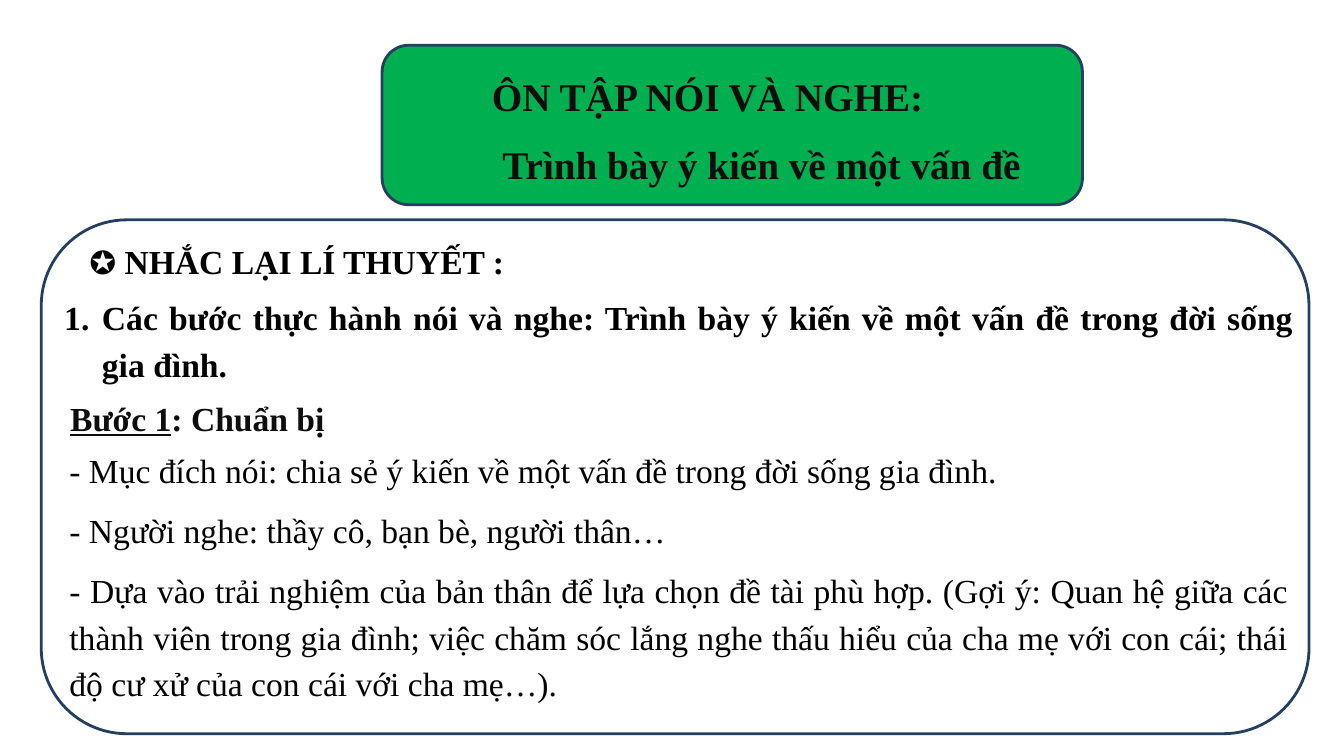
from dataclasses import dataclass

from lxml.etree import SubElement
from pptx import Presentation
from pptx.dml.color import RGBColor
from pptx.enum.shapes import MSO_SHAPE as Shape
from pptx.enum.text import MSO_ANCHOR as Anchor, MSO_AUTO_SIZE as AutoSize, PP_ALIGN as Align
from pptx.oxml.ns import qn
from pptx.util import Cm, Pt

FONT = "Times New Roman"
BLACK, INK, NAVY, GREEN = "000000", "0D0D0D", "243F60", "00B050"


@dataclass
class Box:
    left: float
    top: float
    width: float
    height: float

    def lengths(self) -> tuple:
        return Cm(self.left), Cm(self.top), Cm(self.width), Cm(self.height)


@dataclass
class Span:
    text: str
    bold: bool = False
    underline: bool = False


@dataclass
class Para:
    spans: list[Span]
    align: Align = Align.JUSTIFY
    margin: float = 0
    indent: float = 0
    numbered: bool = False
    line: float = 1.15
    after: float = 10


@dataclass
class TextBlock:
    box: Box
    paras: list[Para]
    color: str = BLACK
    size: float = 24


def rgb(value: str) -> RGBColor:
    return RGBColor.from_string(value)


def add_frame(s, box: Box, fill: str | None = None) -> None:
    sp = s.shapes.add_shape(Shape.ROUNDED_RECTANGLE, *box.lengths())
    sp.shadow.inherit = False
    sp.line.color.rgb = rgb(NAVY)
    sp.line.width = Pt(2)
    if fill:
        sp.fill.solid()
        sp.fill.fore_color.rgb = rgb(fill)
    else:
        sp.fill.background()


def write_text(sp, block: TextBlock) -> None:
    sp.left, sp.top, sp.width, sp.height = block.box.lengths()
    tf = sp.text_frame
    tf.word_wrap = True
    tf.auto_size = AutoSize.NONE
    tf.vertical_anchor = Anchor.TOP
    for i, para in enumerate(block.paras):
        p = tf.add_paragraph() if i else tf.paragraphs[0]
        pPr = p._p.get_or_add_pPr()
        pPr.set("marL", str(Cm(para.margin)))
        pPr.set("indent", str(Cm(para.indent)))
        if para.numbered:
            SubElement(pPr, qn("a:buAutoNum"), type="arabicPeriod")
        p.alignment = para.align
        p.line_spacing = para.line
        p.space_after = Pt(para.after)
        for span in para.spans:
            r = p.add_run()
            r.text = span.text
            r.font.name = FONT
            r.font.size = Pt(block.size)
            r.font.bold = span.bold
            r.font.underline = span.underline
            r.font.color.rgb = rgb(block.color)


TITLE = TextBlock(Box(8.38, 1.52, 18.9, 3.25), [
    Para([Span("ÔN TẬP NÓI VÀ NGHE:", True)], Align.CENTER),
    Para([Span("Trình bày ý kiến về một vấn đề", True)], Align.CENTER, margin=2.72),
], INK, 28)

BODY = [
    TextBlock(Box(2.01, 5.94, 16.92, 1.27), [
        Para([Span("✪ "), Span("NHẮC LẠI LÍ THUYẾT :", True)], Align.LEFT, line=1, after=0),
    ]),
    TextBlock(Box(1.37, 7.21, 31.47, 2.54), [
        Para([Span("Các bước thực hành nói và nghe: Trình bày ý kiến về một vấn đề "
                   "trong đời sống gia đình.", True)],
             margin=0.95, indent=-0.95, numbered=True),
    ]),
    TextBlock(Box(1.04, 9.75, 16.92, 1.37), [
        Para([Span("Bước 1", True, True), Span(": Chuẩn bị", True)], margin=0.48),
    ], INK),
    TextBlock(Box(1.5, 11.05, 31.22, 6.78), [
        Para([Span("- Mục đích nói: chia sẻ ý kiến về một vấn đề trong đời sống gia đình.")]),
        Para([Span("- Người nghe: thầy cô, bạn bè, người thân…")]),
        Para([Span("- Dựa vào trải nghiệm của bản thân để lựa chọn đề tài phù hợp. "
                   "(Gợi ý: Quan hệ giữa các thành viên trong gia đình; việc chăm sóc "
                   "lắng nghe thấu hiểu của cha mẹ với con cái; thái độ cư xử của con "
                   "cái với cha mẹ…).")]),
    ]),
]


def main() -> None:
    prs = Presentation()
    prs.slide_width, prs.slide_height = Cm(33.87), Cm(19.05)
    s = prs.slides.add_slide(prs.slide_layouts[5])

    # Rounded frames behind the text
    add_frame(s, Box(9.63, 1.14, 17.65, 4.02), GREEN)
    add_frame(s, Box(1.04, 5.54, 31.95, 12.95))

    # Title, brought in front of its green frame
    title = s.shapes.title
    s.shapes.element.append(title.element)
    write_text(title, TITLE)

    # Theory review
    for block in BODY:
        write_text(s.shapes.add_textbox(*block.box.lengths()), block)

    prs.save("out.pptx")


if __name__ == "__main__":
    main()
